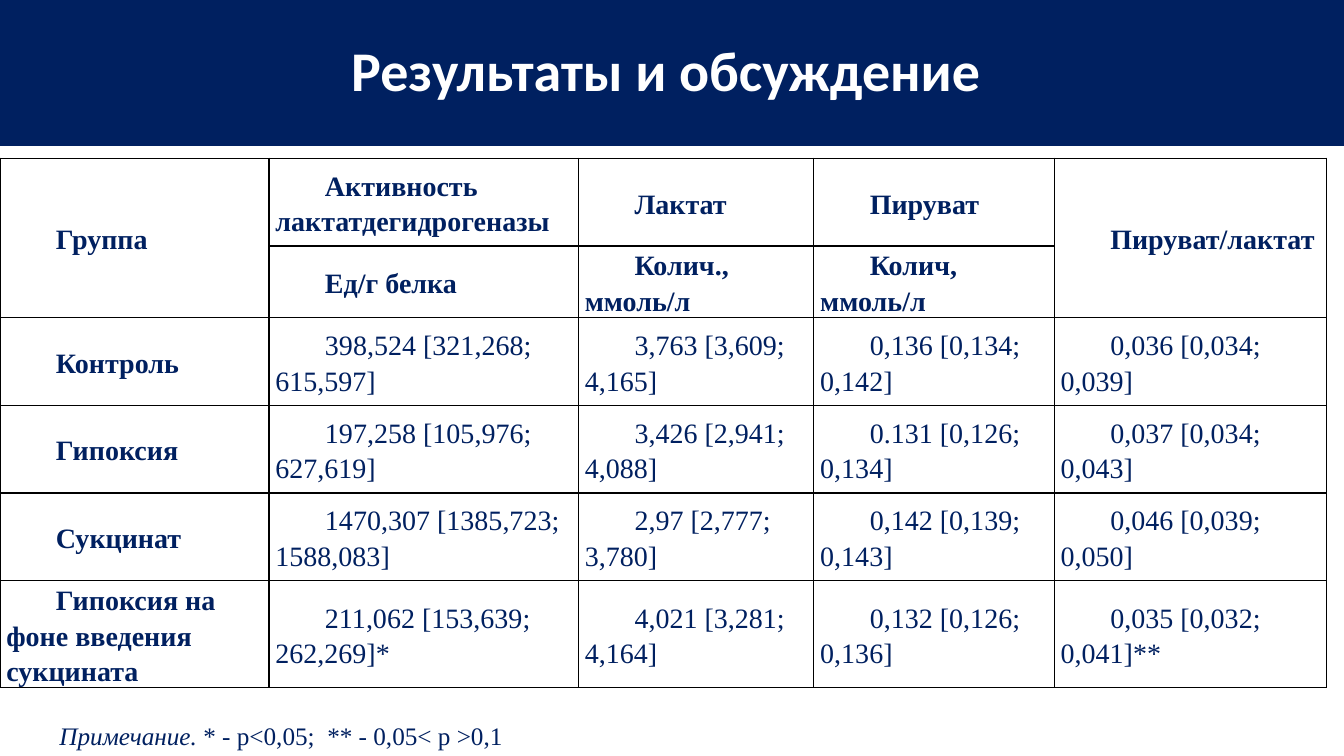
from dataclasses import dataclass

from lxml import etree
from pptx import Presentation
from pptx.dml.color import RGBColor
from pptx.enum.shapes import MSO_SHAPE
from pptx.enum.text import MSO_ANCHOR, MSO_AUTO_SIZE, PP_ALIGN
from pptx.oxml.ns import qn
from pptx.util import Cm, Pt

RECTANGLE = MSO_SHAPE.RECTANGLE
MIDDLE = MSO_ANCHOR.MIDDLE
FIT_SHAPE = MSO_AUTO_SIZE.SHAPE_TO_FIT_TEXT
LEFT, CENTER = PP_ALIGN.LEFT, PP_ALIGN.CENTER


@dataclass(frozen=True)
class Theme:
    navy: RGBColor = RGBColor(0x00, 0x20, 0x60)
    white: RGBColor = RGBColor(0xFF, 0xFF, 0xFF)
    border: str = "000000"
    border_width: int = Pt(1)
    title_font: str = "Calibri"
    body_font: str = "Times New Roman"
    title_size: int = Pt(40)
    table_size: int = Pt(20)
    note_size: int = Pt(18)
    first_line: int = Cm(1.25)


THEME = Theme()

COLUMN_WIDTHS = [6.78, 7.8, 5.93, 6.06, 6.86]
ROW_HEIGHTS = [2.21, 1.47, 2.21, 2.21, 2.21, 2.21]
HEADER_ROWS = 2
# None marks a cell merged into the one above
RESULTS = [
    ["Группа", "Активность лактатдегидрогеназы", "Лактат", "Пируват", "Пируват/лактат"],
    [None, "Ед/г белка", "Колич., ммоль/л", "Колич, ммоль/л", None],
    ["Контроль", "398,524 [321,268; 615,597]", "3,763 [3,609; 4,165]",
     "0,136 [0,134; 0,142]", "0,036 [0,034; 0,039]"],
    ["Гипоксия", "197,258 [105,976; 627,619]", "3,426 [2,941; 4,088]",
     "0.131 [0,126; 0,134]", "0,037 [0,034; 0,043]"],
    ["Сукцинат", "1470,307 [1385,723; 1588,083]", "2,97 [2,777; 3,780]",
     "0,142 [0,139; 0,143]", "0,046 [0,039; 0,050]"],
    ["Гипоксия на фоне введения сукцината", "211,062 [153,639; 262,269]*",
     "4,021 [3,281; 4,164]", "0,132 [0,126; 0,136]", "0,035 [0,032; 0,041]**"],
]


def add_run(paragraph, text, font, size, color, bold=False, italic=False):
    run = paragraph.add_run()
    run.text = text
    run.font.name, run.font.size = font, size
    run.font.bold, run.font.italic = bold, italic
    run.font.color.rgb = color


def indent_first_line(paragraph):
    properties = paragraph._p.get_or_add_pPr()
    properties.set("marL", "0")
    properties.set("indent", str(int(THEME.first_line)))


def add_panel(slide, box, fill):
    panel = slide.shapes.add_shape(RECTANGLE, *(Cm(length) for length in box))
    panel.shadow.inherit = False
    panel.fill.solid()
    panel.fill.fore_color.rgb = fill
    panel.line.fill.background()
    panel.text_frame.vertical_anchor = MIDDLE
    return panel.text_frame


def draw_borders(cell):
    properties = cell._tc.get_or_add_tcPr()
    for position, side in enumerate(("a:lnL", "a:lnR", "a:lnT", "a:lnB")):
        line = etree.Element(qn(side), w=str(int(THEME.border_width)))
        solid = etree.SubElement(line, qn("a:solidFill"))
        etree.SubElement(solid, qn("a:srgbClr"), val=THEME.border)
        properties.insert(position, line)


# Title band
def add_title(slide, box):
    frame = add_panel(slide, box, THEME.navy)
    frame.word_wrap = True
    heading = frame.paragraphs[0]
    heading.alignment = CENTER
    heading.line_spacing = 0.9
    add_run(heading, "Результаты и обсуждение ", THEME.title_font,
            THEME.title_size, THEME.white, bold=True)


# Table of results
def add_results(slide, box):
    table = slide.shapes.add_table(len(RESULTS), len(COLUMN_WIDTHS),
                                   *(Cm(length) for length in box)).table
    for column, width in zip(table.columns, COLUMN_WIDTHS):
        column.width = Cm(width)
    for row, height in zip(table.rows, ROW_HEIGHTS):
        row.height = Cm(height)

    for r, values in enumerate(RESULTS):
        for c, value in enumerate(values):
            cell = table.cell(r, c)
            cell.vertical_anchor = MIDDLE
            cell.margin_left = cell.margin_right = Cm(0.16)
            cell.margin_top = cell.margin_bottom = 0
            if r == 0 and c > 0:
                cell.fill.solid()
                cell.fill.fore_color.rgb = THEME.white
            else:
                cell.fill.background()
            draw_borders(cell)
            if value is None:
                table.cell(r - 1, c).merge(cell)
                continue
            paragraph = cell.text_frame.paragraphs[0]
            paragraph.line_spacing = 1.15
            indent_first_line(paragraph)
            add_run(paragraph, value, THEME.body_font, THEME.table_size,
                    THEME.navy, bold=r < HEADER_ROWS or c == 0)


# Footnote on significance levels
def add_note(slide, box):
    frame = add_panel(slide, box, THEME.white)
    frame.word_wrap = False
    frame.auto_size = FIT_SHAPE
    note = frame.paragraphs[0]
    note.alignment = LEFT
    indent_first_line(note)
    for text, italic in (("Примечание.", True),
                         (" * - p<0,05;  ** - 0,05< p >0,1", False)):
        add_run(note, text, THEME.body_font, THEME.note_size, THEME.navy, italic=italic)


def main():
    deck = Presentation()
    deck.slide_width, deck.slide_height = Cm(33.87), Cm(19.05)
    slide = deck.slides.add_slide(deck.slide_layouts[6])
    add_title(slide, (0, 0, 33.87, 3.68))
    add_results(slide, (0, 3.99, sum(COLUMN_WIDTHS), sum(ROW_HEIGHTS)))
    add_note(slide, (0, 18.03, 13.2, 1.02))
    deck.save("out.pptx")


if __name__ == "__main__":
    main()
